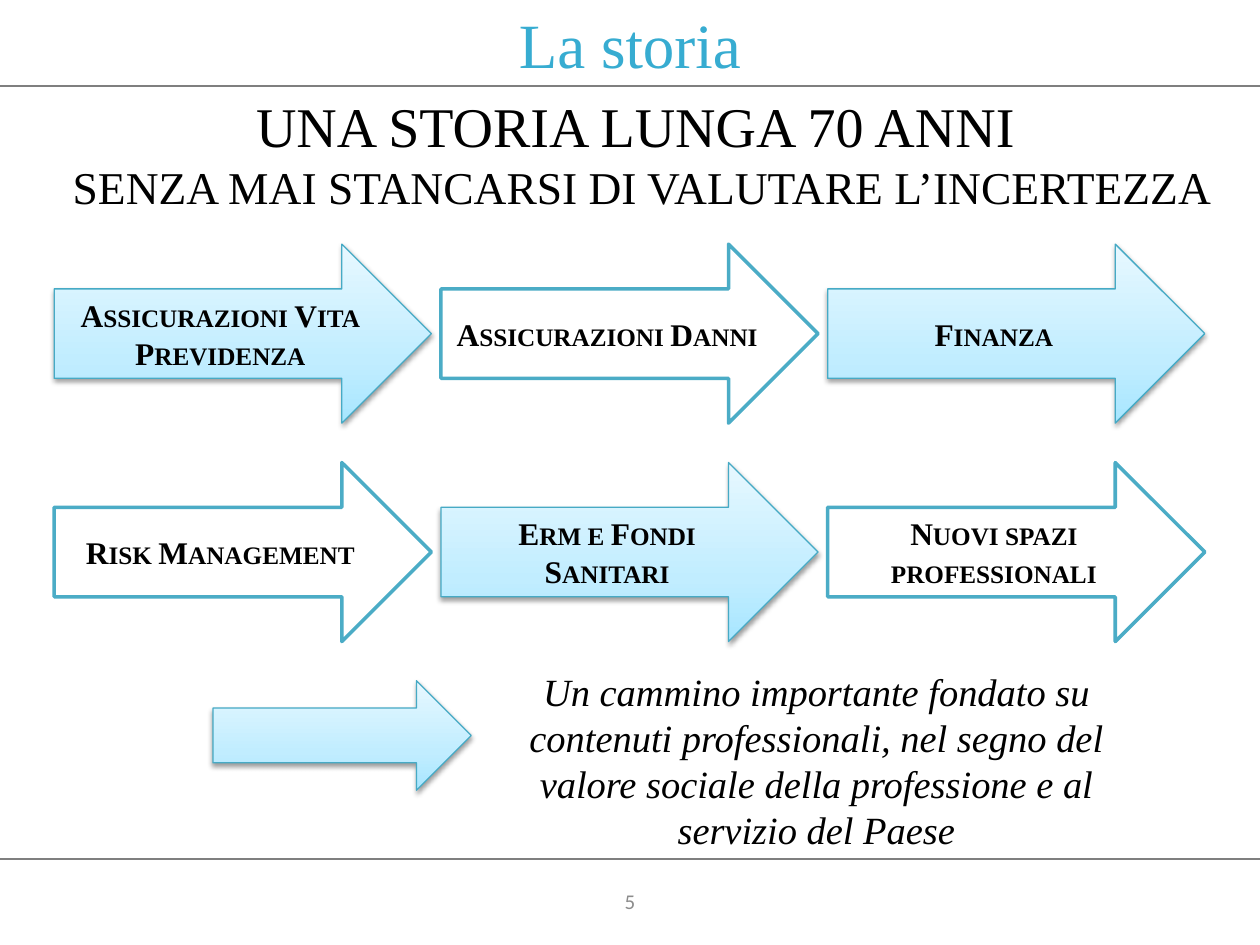
from lxml.etree import SubElement
from pptx import Presentation
from pptx.dml.color import RGBColor
from pptx.enum.shapes import MSO_CONNECTOR, MSO_SHAPE
from pptx.enum.text import MSO_ANCHOR, PP_ALIGN
from pptx.oxml.ns import qn
from pptx.util import Pt

# Content
TITLE = "La storia"
HEADLINE = [("UNA STORIA LUNGA 70 ANNI ", 32),
            ("SENZA MAI STANCARSI DI VALUTARE L’INCERTEZZA", 26)]
STAGES = [
    ["Assicurazioni Vita", "Previdenza"], ["Assicurazioni Danni"], ["Finanza"],
    ["Risk Management"], ["Erm e Fondi Sanitari"], ["Nuovi spazi professionali"],
]
CLOSING = ("Un cammino importante fondato su contenuti professionali, nel segno "
           "del valore sociale della professione e al servizio del Paese")
PAGE_NUMBER = "5"

SERIF = "Times New Roman"
GRADIENT = [(0, "A7E6FF"), (35, "C1EDFF"), (100, "E7F8FF")]

# Layout in points
WIDTH, HEIGHT = 720, 540
RULES = [49, 491]
COLUMNS = 3
STAGE_LEFT, STAGE_TOP, STAGE_WIDTH, STAGE_HEIGHT = 31, 139.5, 215.5, 102.3
COLUMN_STEP, ROW_STEP = 221, 124.8


def color(hex_value):
    return RGBColor.from_string(hex_value)


def write(frame, lines, font=SERIF, ink="000000", bold=None, italic=None,
          small_caps=False, indent=0, anchor=MSO_ANCHOR.MIDDLE):
    """Fill a text frame with centred (text, size) lines."""
    frame.word_wrap = True
    frame.vertical_anchor = anchor
    for index, (text, size) in enumerate(lines):
        paragraph = frame.paragraphs[0] if index == 0 else frame.add_paragraph()
        paragraph.alignment = PP_ALIGN.CENTER
        if indent:
            properties = paragraph._p.get_or_add_pPr()
            properties.set("marL", str(Pt(indent)))
            properties.set("indent", "0")
        run = paragraph.add_run()
        run.text = text
        run.font.name, run.font.size = font, Pt(size)
        run.font.bold, run.font.italic = bold, italic
        run.font.color.rgb = color(ink)
        if small_caps:
            run.font._element.set("cap", "small")


def add_text(left, top, width, height, lines, **style):
    box = slide.shapes.add_textbox(Pt(left), Pt(top), Pt(width), Pt(height))
    write(box.text_frame, lines, **style)


def add_color(parent, hex_value):
    return SubElement(parent, qn("a:srgbClr"), val=hex_value)


def add_arrow(left, top, width, height, shaded):
    arrow = slide.shapes.add_shape(MSO_SHAPE.RIGHT_ARROW, Pt(left), Pt(top),
                                   Pt(width), Pt(height))
    arrow.shadow.inherit = False
    arrow.line.color.rgb = color("46AAC5" if shaded else "4BACC6")
    arrow.line.width = Pt(0.75 if shaded else 2)
    if not shaded:
        arrow.fill.solid()
        arrow.fill.fore_color.rgb = color("FFFFFF")
        return arrow

    # Three-stop gradient, darkest at the bottom
    arrow.fill.gradient()
    arrow.fill.gradient_angle = 90
    properties = arrow._element.spPr
    stops = properties.find(qn("a:gradFill")).find(qn("a:gsLst"))
    for stop in list(stops):
        stops.remove(stop)
    for position, hex_value in GRADIENT:
        add_color(SubElement(stops, qn("a:gs"), pos=str(position * 1000)), hex_value)

    # Soft shadow falling straight down
    shadow = SubElement(properties.find(qn("a:effectLst")), qn("a:outerShdw"),
                        blurRad=str(Pt(3.1)), dist=str(Pt(1.6)),
                        dir="5400000", rotWithShape="0")
    SubElement(add_color(shadow, "000000"), qn("a:alpha"), val="38000")
    return arrow


presentation = Presentation()
presentation.slide_width, presentation.slide_height = Pt(WIDTH), Pt(HEIGHT)
slide = presentation.slides.add_slide(presentation.slide_layouts[5])

# Rules under the title and above the footer
for y in RULES:
    rule = slide.shapes.add_connector(MSO_CONNECTOR.STRAIGHT, 0, Pt(y), Pt(WIDTH), Pt(y))
    rule.line.color.rgb = color("7F7F7F")
    rule.line.width = Pt(1)
    SubElement(rule._element.spPr, qn("a:effectLst"))

# Title and headline
title = slide.shapes.title
title.left, title.top, title.width, title.height = 0, 0, Pt(WIDTH), Pt(RULES[0])
write(title.text_frame, [(TITLE, 36)], ink="37ACD1")
add_text(0, RULES[0], WIDTH, 78, HEADLINE, indent=14.4, anchor=MSO_ANCHOR.TOP)

# Stages: shaded and plain arrows alternate
for index, stage in enumerate(STAGES):
    row, column = divmod(index, COLUMNS)
    arrow = add_arrow(STAGE_LEFT + column * COLUMN_STEP, STAGE_TOP + row * ROW_STEP,
                      STAGE_WIDTH, STAGE_HEIGHT, shaded=index % 2 == 0)
    write(arrow.text_frame, [(line, 18) for line in stage], bold=True, small_caps=True)

# Closing message and page number
add_arrow(121.7, 389, 147.6, 62.6, shaded=True)
add_text(286.5, 378, 360, 114, [(CLOSING, 22)], italic=True, anchor=MSO_ANCHOR.TOP)
add_text(0, 500.5, WIDTH, 28.8, [(PAGE_NUMBER, 12)], font="Calibri", ink="8C8C8C")

presentation.save("out.pptx")
